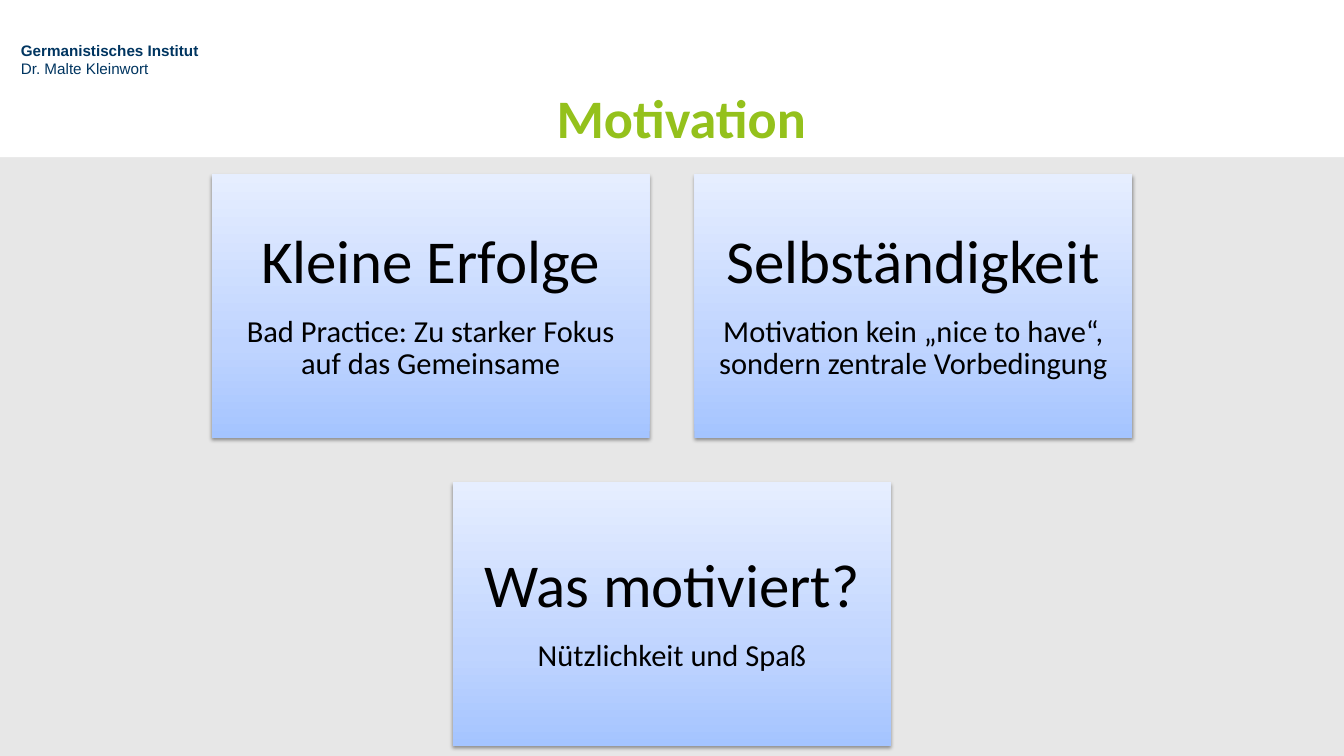
import pptx
import pptx.dml.color
import pptx.enum.shapes
import pptx.enum.text
import pptx.oxml
import pptx.oxml.ns
import pptx.util
from pptx.util import Cm

RGBColor = pptx.dml.color.RGBColor
WHITE = RGBColor(0xFF, 0xFF, 0xFF)
BLACK = RGBColor(0x00, 0x00, 0x00)
GREY = RGBColor(0xE7, 0xE7, 0xE7)
NAVY = RGBColor(0x00, 0x35, 0x60)
GREEN = RGBColor(0x94, 0xC1, 0x1C)
CARD_BOTTOM = RGBColor(0xA4, 0xC4, 0xFF)
CARD_MIDDLE = RGBColor(0xBF, 0xD4, 0xFF)
CARD_TOP = RGBColor(0xE6, 0xEE, 0xFF)

SLIDE_WIDTH, SLIDE_HEIGHT = 37.34, 21.01
CARD_WIDTH, CARD_HEIGHT, CARD_GAP = 12.17, 7.32, 1.24
CARDS_TOP = 4.85
CARD_ROWS = [
    [("Kleine Erfolge", "Bad Practice: Zu starker Fokus auf das Gemeinsame"),
     ("Selbständigkeit",
      "Motivation kein „nice to have“, sondern zentrale Vorbedingung")],
    [("Was motiviert?", "Nützlichkeit und Spaß")],
]


def add_run(paragraph, text, size, color, font="Calibri", bold=False):
    run = paragraph.add_run()
    run.text = text
    run.font.size = pptx.util.Pt(size)
    run.font.name = font
    run.font.bold = bold
    run.font.color.rgb = color


def set_margins(frame, margin):
    frame.margin_left = frame.margin_right = Cm(margin)
    frame.margin_top = frame.margin_bottom = Cm(margin)


def add_rectangle(slide, left, top, width, height):
    shape = slide.shapes.add_shape(
        pptx.enum.shapes.MSO_SHAPE.RECTANGLE,
        Cm(left), Cm(top), Cm(width), Cm(height))
    shape.shadow.inherit = False
    shape.line.fill.background()
    return shape


def add_text_box(slide, left, top, width, height):
    box = slide.shapes.add_textbox(Cm(left), Cm(top), Cm(width), Cm(height))
    box.text_frame.word_wrap = True
    return box.text_frame


def add_gradient_and_shadow(shape):
    namespace = pptx.oxml.ns.nsdecls("a")
    colors = ((0, CARD_BOTTOM), (35, CARD_MIDDLE), (100, CARD_TOP))
    stops = "".join(
        f'<a:gs pos="{position * 1000}"><a:srgbClr val="{color}"/></a:gs>'
        for position, color in colors)
    gradient = pptx.oxml.parse_xml(
        f'<a:gradFill {namespace} rotWithShape="1"><a:gsLst>{stops}</a:gsLst>'
        '<a:lin ang="16200000" scaled="0"/></a:gradFill>')
    shadow = pptx.oxml.parse_xml(
        f'<a:outerShdw {namespace} blurRad="40000" dist="20000" dir="5400000" '
        'rotWithShape="0"><a:srgbClr val="000000"><a:alpha val="38000"/>'
        '</a:srgbClr></a:outerShdw>')
    properties = shape.element.spPr
    properties.find(pptx.oxml.ns.qn("a:prstGeom")).addnext(gradient)
    properties.find(pptx.oxml.ns.qn("a:effectLst")).append(shadow)


def add_card(slide, left, top, heading, detail):
    card = add_rectangle(slide, left, top, CARD_WIDTH, CARD_HEIGHT)
    add_gradient_and_shadow(card)
    frame = card.text_frame
    frame.word_wrap = True
    frame.vertical_anchor = pptx.enum.text.MSO_ANCHOR.MIDDLE
    set_margins(frame, 0.51)
    heading_paragraph = frame.paragraphs[0]
    heading_paragraph.space_after = pptx.util.Pt(15)
    detail_paragraph = frame.add_paragraph()
    add_run(heading_paragraph, heading, 48, BLACK)
    add_run(detail_paragraph, detail, 24, BLACK)
    for paragraph in frame.paragraphs:
        paragraph.alignment = pptx.enum.text.PP_ALIGN.CENTER
        paragraph.line_spacing = 0.9


def add_header(slide):
    band = add_rectangle(slide, 0, 0, SLIDE_WIDTH, 4.37)
    band.fill.solid()
    band.fill.fore_color.rgb = WHITE

    # Institute and lecturer
    frame = add_text_box(slide, 0.58, 1.14, 7.24, 1.6)
    set_margins(frame, 0)
    paragraph = frame.paragraphs[0]
    add_run(paragraph, "Germanistisches Institut", 12, NAVY, "Arial", True)
    paragraph.add_line_break()
    add_run(paragraph, "Dr. Malte Kleinwort", 12, NAVY, "Arial")

    # Title
    frame = add_text_box(slide, 0.53, 2.21, 36.8, 2.08)
    paragraph = frame.paragraphs[0]
    paragraph.alignment = pptx.enum.text.PP_ALIGN.CENTER
    add_run(paragraph, "Motivation", 42.7, GREEN, bold=True)


def add_cards(slide):
    for row, cards in enumerate(CARD_ROWS):
        # Each row is centred on the slide
        row_width = len(cards) * (CARD_WIDTH + CARD_GAP) - CARD_GAP
        row_left = (SLIDE_WIDTH - row_width) / 2
        top = CARDS_TOP + row * (CARD_HEIGHT + CARD_GAP)
        for column, (heading, detail) in enumerate(cards):
            left = row_left + column * (CARD_WIDTH + CARD_GAP)
            add_card(slide, left, top, heading, detail)


def main():
    presentation = pptx.Presentation()
    presentation.slide_width = Cm(SLIDE_WIDTH)
    presentation.slide_height = Cm(SLIDE_HEIGHT)
    slide = presentation.slides.add_slide(presentation.slide_layouts[6])
    slide.background.fill.solid()
    slide.background.fill.fore_color.rgb = GREY
    add_header(slide)
    add_cards(slide)
    presentation.save("out.pptx")


if __name__ == "__main__":
    main()
